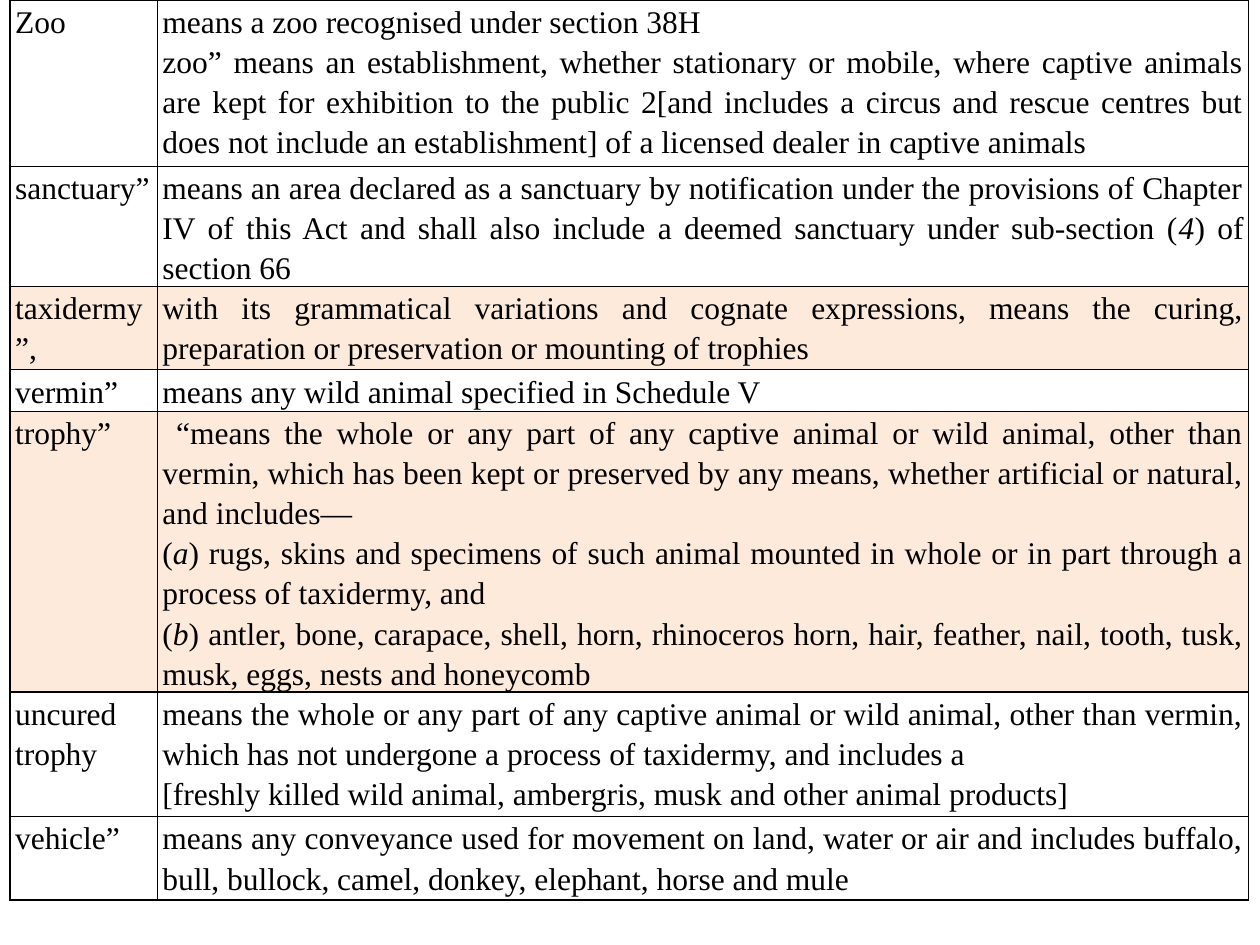
from lxml.etree import SubElement
from pptx import Presentation
from pptx.dml.color import RGBColor
from pptx.enum.text import PP_ALIGN as Align
from pptx.oxml.ns import qn
from pptx.util import Inches, Pt

BLACK = RGBColor(0x00, 0x00, 0x00)
PEACH = RGBColor(0xFD, 0xEA, 0xDA)
FONT = "Times New Roman"
COLUMN_WIDTHS = (1.17, 8.66)

# Row height, shading, term, paragraphs of the definition; *marks* set italics.
DEFINITIONS = [
    (1.32, None, "Zoo", [
        "means a zoo recognised under section 38H",
        "zoo” means an establishment, whether stationary or mobile, where captive "
        "animals are kept for exhibition to the public 2[and includes a circus and "
        "rescue centres but does not include an establishment] of a licensed dealer "
        "in captive animals"]),
    (0.66, None, "sanctuary”", [
        "means an area declared as a sanctuary by notification under the provisions "
        "of Chapter IV of this Act and shall also include a deemed sanctuary under "
        "sub-section (*4*) of section 66"]),
    (0.66, PEACH, "taxidermy”,", [
        "with its grammatical variations and cognate expressions, means the curing, "
        "preparation or preservation or mounting of trophies"]),
    (0.33, None, "vermin”", ["means any wild animal specified in Schedule V"]),
    (1.99, PEACH, "trophy”", [
        " “means the whole or any part of any captive animal or wild animal, other "
        "than vermin, which has been kept or preserved by any means, whether "
        "artificial or natural, and includes— ",
        "(*a*) rugs, skins and specimens of such animal mounted in whole or in part "
        "through a process of taxidermy, and ",
        "(*b*) antler, bone, carapace, shell, horn, rhinoceros horn, hair, feather, "
        "nail, tooth, tusk, musk, eggs, nests and honeycomb "]),
    (0.99, None, "uncured trophy", [
        "means the whole or any part of any captive animal or wild animal, other "
        "than vermin, which has not undergone a process of taxidermy, and includes a ",
        "[freshly killed wild animal, ambergris, musk and other animal products] "]),
    (0.66, None, "vehicle”", [
        "means any conveyance used for movement on land, water or air and includes "
        "buffalo, bull, bullock, camel, donkey, elephant, horse and mule"]),
]


def write_text(frame, paragraphs, size=18, color=BLACK, align=Align.JUSTIFY, spacing=1.15):
    """Fill a text frame; every second piece between asterisks is italic."""
    for index, text in enumerate(paragraphs):
        para = frame.add_paragraph() if index else frame.paragraphs[0]
        para.alignment = align
        para.line_spacing = spacing
        for piece_index, piece in enumerate(text.split("*")):
            span = para.add_run()
            span.text = piece
            span.font.name = FONT
            span.font.size = Pt(size)
            span.font.color.rgb = color
            span.font.italic = piece_index % 2 == 1


def draw_borders(cell, color=BLACK, width=1):
    properties = cell._tc.get_or_add_tcPr()
    for position, side in enumerate(("a:lnL", "a:lnR", "a:lnT", "a:lnB")):
        line = SubElement(properties, qn(side), w=str(Pt(width)))
        fill = SubElement(line, qn("a:solidFill"))
        SubElement(fill, qn("a:srgbClr"), val=str(color))
        properties.insert(position, line)


def fill_cell(cell, paragraphs, shade):
    cell.margin_left = cell.margin_right = Inches(0.04)
    cell.margin_top = cell.margin_bottom = 0
    if shade is None:
        cell.fill.background()
    else:
        cell.fill.solid()
        cell.fill.fore_color.rgb = shade
    draw_borders(cell)
    write_text(cell.text_frame, paragraphs)


def add_definitions(page, left, top, width):
    height = sum(row[0] for row in DEFINITIONS)
    table = page.shapes.add_table(
        len(DEFINITIONS), len(COLUMN_WIDTHS),
        Inches(left), Inches(top), Inches(width), Inches(height)).table
    table.first_row = table.horz_banding = False
    for column, column_width in zip(table.columns, COLUMN_WIDTHS):
        column.width = Inches(column_width)
    for row, (row_height, shade, term, meaning) in zip(table.rows, DEFINITIONS):
        row.height = Inches(row_height)
        fill_cell(row.cells[0], [term], shade)
        fill_cell(row.cells[1], meaning, shade)


def main():
    deck = Presentation()
    deck.slide_width, deck.slide_height = Inches(10), Inches(7.5)
    page = deck.slides.add_slide(deck.slide_layouts[6])
    add_definitions(page, left=0.08, top=0, width=sum(COLUMN_WIDTHS))
    deck.save("out.pptx")


if __name__ == "__main__":
    main()
